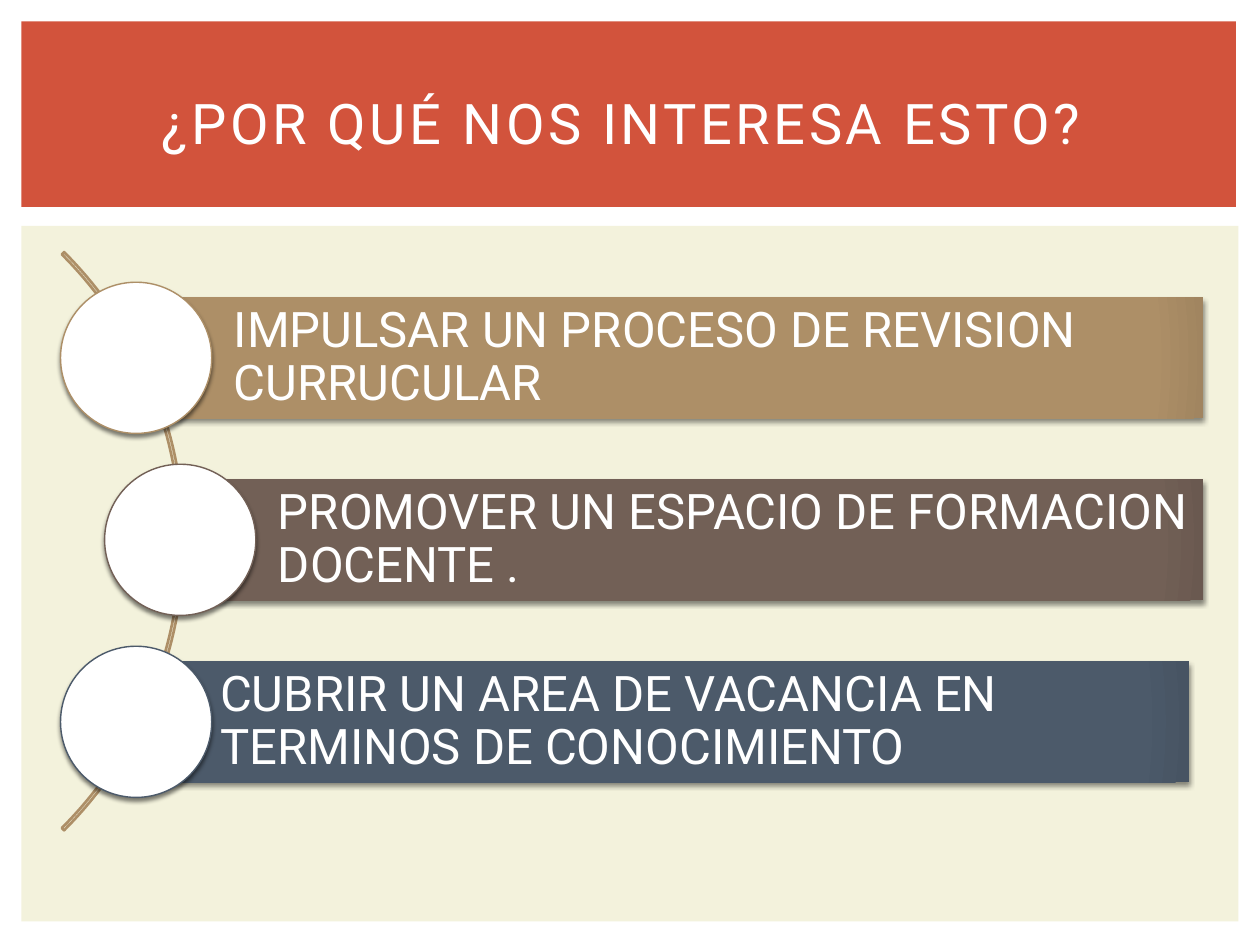
"""Build a slide with a title band and three reasons set along an arc."""
from dataclasses import dataclass

from lxml.etree import SubElement
from pptx import Presentation
from pptx.dml.color import RGBColor
from pptx.enum.shapes import MSO_SHAPE
from pptx.enum.text import MSO_ANCHOR, PP_ALIGN
from pptx.oxml import parse_xml
from pptx.oxml.ns import nsdecls, qn
from pptx.util import Pt

WHITE = RGBColor(0xFF, 0xFF, 0xFF)
CREAM = RGBColor(0xF3, 0xF2, 0xDC)
RED = RGBColor(0xD2, 0x53, 0x3C)
TAN = RGBColor(0xAD, 0x8F, 0x67)
TAN_EDGE = RGBColor(0xA1, 0x85, 0x60)
BROWN = RGBColor(0x72, 0x60, 0x56)
BROWN_EDGE = RGBColor(0x6A, 0x59, 0x50)
SLATE = RGBColor(0x4C, 0x5A, 0x6A)
SLATE_EDGE = RGBColor(0x47, 0x54, 0x63)
FONT = "Roboto"
FIRST, PITCH = 204.5, 104
BAR, DOT = 69, 86.4


@dataclass
class Reason:
    """One bar of text with its dot."""
    text: str
    left: float
    width: float
    dot: float
    color: RGBColor
    edge: RGBColor


REASONS = [
    Reason("IMPULSAR UN PROCESO DE REVISION CURRUCULAR",
           78.5, 609, 34.6, TAN, TAN_EDGE),
    Reason("PROMOVER UN ESPACIO DE FORMACION DOCENTE .",
           103.7, 584, 59.8, BROWN, BROWN_EDGE),
    Reason("CUBRIR UN AREA DE VACANCIA EN TERMINOS DE CONOCIMIENTO",
           70.6, 609, 34.6, SLATE, SLATE_EDGE),
]


def add_shape(slide, kind, left: float, top: float, width: float,
              height: float, fill: RGBColor | None):
    """Add a preset shape with no line and no shadow."""
    shape = slide.shapes.add_shape(
        kind, Pt(left), Pt(top), Pt(width), Pt(height))
    shape.shadow.inherit = False
    shape.line.fill.background()
    if fill is None:
        shape.fill.background()
    else:
        shape.fill.solid()
        shape.fill.fore_color.rgb = fill
    return shape


def set_line(shape, color: RGBColor, width: float) -> None:
    """Outline a shape."""
    shape.line.color.rgb = color
    shape.line.width = Pt(width)


def add_shadow(shape, blur: float, alpha: int) -> None:
    """Cast a soft black shadow straight down."""
    effects = shape._element.spPr.find(qn("a:effectLst"))
    outer = SubElement(effects, qn("a:outerShdw"), blurRad=str(Pt(blur)),
                       dist=str(Pt(2)), dir="5400000", rotWithShape="0")
    black = SubElement(outer, qn("a:srgbClr"), val="000000")
    SubElement(black, qn("a:alpha"), val=str(alpha * 1000))


def shade(shape, color: RGBColor, edge: RGBColor) -> None:
    """Swap a solid fill for a radial gradient."""
    stops = "".join(
        f'<a:gs pos="{pos}000"><a:srgbClr val="{tone}"/></a:gs>'
        for pos, tone in ((0, color), (90, color), (100, edge)))
    grad = parse_xml(
        f'<a:gradFill {nsdecls("a")} rotWithShape="1"><a:gsLst>{stops}'
        '</a:gsLst><a:path path="circle"><a:fillToRect l="100000" t="100000" '
        'r="100000" b="100000"/></a:path></a:gradFill>')
    props = shape._element.spPr
    props.replace(props.find(qn("a:solidFill")), grad)


def add_text(frame, text: str, size: float, align: PP_ALIGN):
    """Write one white run and return it."""
    frame.word_wrap = True
    frame.vertical_anchor = MSO_ANCHOR.MIDDLE
    para = frame.paragraphs[0]
    para.alignment = align
    run = para.add_run()
    run.text = text
    run.font.name = FONT
    run.font.size = Pt(size)
    run.font.color.rgb = WHITE
    return run


def add_reason(slide, item: Reason, mid: float) -> None:
    """Draw one bar and its dot around a middle height."""
    bar = add_shape(slide, MSO_SHAPE.RECTANGLE, item.left, mid - BAR / 2,
                    item.width, BAR, item.color)
    shade(bar, item.color, item.edge)
    add_shadow(bar, 3, 45)
    frame = bar.text_frame
    frame.margin_left = Pt(55.2)
    frame.margin_top = frame.margin_right = frame.margin_bottom = Pt(5.6)
    add_text(frame, item.text, 28, PP_ALIGN.LEFT)
    frame.paragraphs[0].line_spacing = 0.9
    dot = add_shape(slide, MSO_SHAPE.OVAL, item.dot, mid - DOT / 2,
                    DOT, DOT, WHITE)
    set_line(dot, item.color, 0.79)
    add_shadow(dot, 2.5, 50)


def add_title(slide, text: str) -> None:
    """Place the title in front of its band."""
    title = slide.shapes.title
    title.left, title.top = Pt(30.25), Pt(28)
    title.width, title.height = Pt(660), Pt(83)
    run = add_text(title.text_frame, text, 32, PP_ALIGN.CENTER)
    run.font._element.set("spc", "200")
    slide.shapes._spTree.append(title._element)


def main() -> None:
    """Build and save the slide."""
    deck = Presentation()
    deck.slide_width, deck.slide_height = Pt(720), Pt(540)
    slide = deck.slides.add_slide(deck.slide_layouts[5])
    add_shape(slide, MSO_SHAPE.RECTANGLE, 12.25, 129, 695.5, 397.5, CREAM)
    add_shape(slide, MSO_SHAPE.RECTANGLE, 12.25, 12.25, 694, 106, RED)
    arc = add_shape(slide, MSO_SHAPE.BLOCK_ARC, -362.2, 75.6,
                    467.3, 467.3, None)
    for index, value in enumerate((189, 27, 0.004)):
        arc.adjustments[index] = value
    set_line(arc, TAN, 1.5)
    for row, item in enumerate(REASONS):
        add_reason(slide, item, FIRST + row * PITCH)
    add_title(slide, "¿POR QUÉ NOS INTERESA ESTO? ")
    deck.save("out.pptx")


if __name__ == "__main__":
    main()
